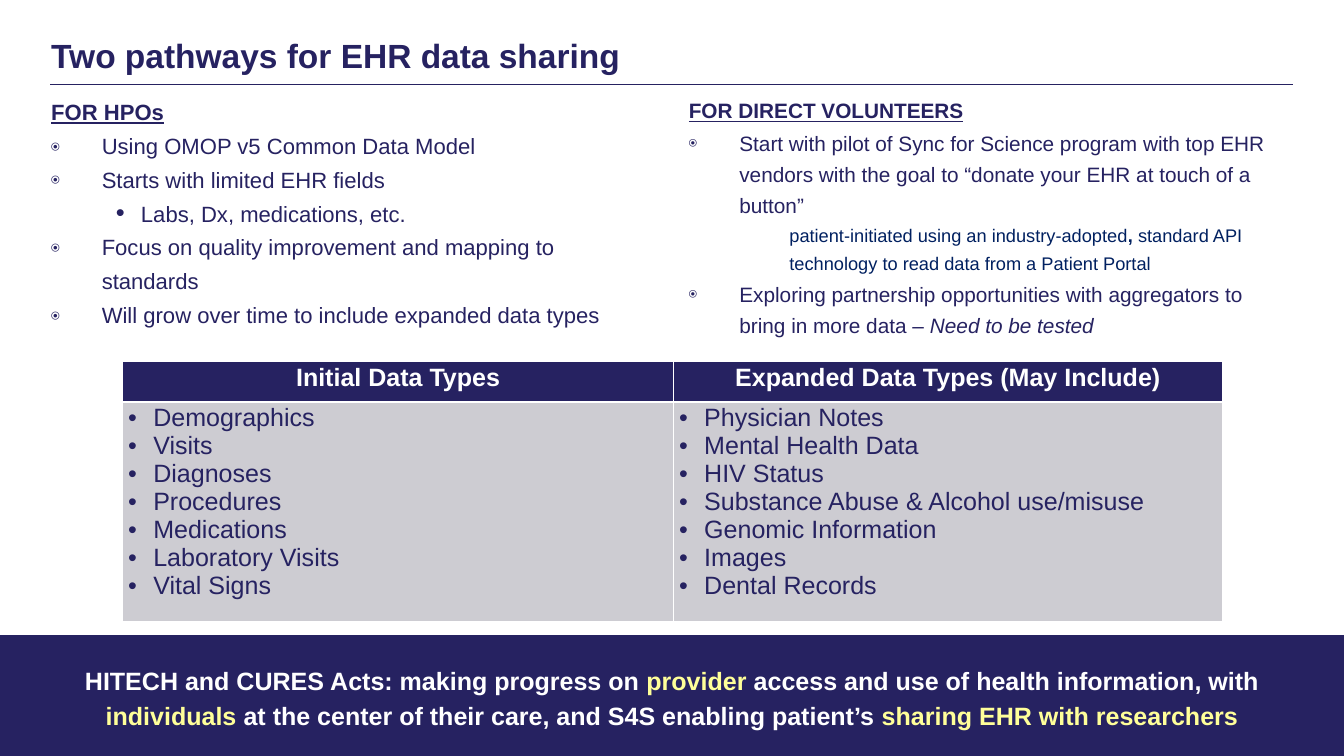
"""Build the slide on two pathways for EHR data sharing."""
from dataclasses import dataclass

import lxml.etree
import pptx
import pptx.dml.color
import pptx.enum.shapes
import pptx.enum.text
import pptx.oxml.ns
import pptx.slide
import pptx.table
import pptx.text.text
import pptx.util
from pptx.util import Cm

COLOURS = {
    "navy": "262261",
    "blue": "002060",
    "white": "FFFFFF",
    "yellow": "FFFF99",
    "grey": "CDCCD2",
}
PAGE_WIDTH, PAGE_HEIGHT = 55.86, 31.42
BAND_TOP = 26.4
LIST_INDENT = 2.1
TABLE_SIZE = 29.5


@dataclass(frozen=True)
class Bullet:
    char: str
    typeface: str
    percent: int
    hang: float


@dataclass(frozen=True)
class Item:
    spans: tuple
    size: float
    pitch: float
    indent: float = LIST_INDENT
    bullet: Bullet | None = None
    colour: str = "navy"
    before: float = 0


@dataclass(frozen=True)
class Pathway:
    heading: str
    size: float
    left: float
    heading_top: float
    list_top: float
    width: float
    items: tuple


RING = Bullet("⦿", "Times New Roman", 60, LIST_INDENT)
DOT = Bullet("•", "Arial", 115, 1.04)
CELL_DOT = Bullet("•", "Arial", 100, 1.04)

PATHWAYS = (
    Pathway("FOR HPOs", 26, 2.13, 4.1, 5.2, 24.2, (
        Item(("Using OMOP v5 Common Data Model",), 26, 39.8, bullet=RING),
        Item(("Starts with limited EHR fields",), 26, 39.8, bullet=RING),
        Item(("Labs, Dx, medications, etc.",), 26, 39.8, 3.73, DOT),
        Item(("Focus on quality improvement and mapping to standards",), 26, 39.8, bullet=RING),
        Item(("Will grow over time to include expanded data types",), 26, 39.8, bullet=RING),
    )),
    Pathway("FOR DIRECT VOLUNTEERS", 24.5, 28.63, 4.08, 5.15, 24.3, (
        Item(("Start with pilot of Sync for Science program with top EHR vendors with the "
              "goal to “donate your EHR at touch of a button”",), 24.5, 36.9, bullet=RING),
        Item(("patient-initiated using an industry-adopted", (", ", {"bold": True}),
              "standard API technology to read data from a Patient Portal"),
             21.5, 33, 4.18, colour="blue"),
        Item(("Exploring partnership opportunities with aggregators to bring in more data – ",
              ("Need to be tested", {"italic": True})), 24.5, 37.1, bullet=RING, before=1),
    )),
)

DATA_TYPES = {
    "Initial Data Types": (
        "Demographics", "Visits", "Diagnoses", "Procedures", "Medications",
        "Laboratory Visits", "Vital Signs",
    ),
    "Expanded Data Types (May Include)": (
        "Physician Notes", "Mental Health Data", "HIV Status",
        "Substance Abuse & Alcohol use/misuse", "Genomic Information", "Images",
        "Dental Records",
    ),
}

MESSAGE = (
    ("HITECH and CURES Acts: making progress on ", "white"),
    ("provider ", "yellow"),
    ("access and use of health information, with ", "white"),
    ("individuals ", "yellow"),
    ("at the center of their care, and S4S enabling patient’s ", "white"),
    ("sharing EHR with researchers", "yellow"),
)


def rgb(name: str) -> pptx.dml.color.RGBColor:
    """Return the named colour."""
    return pptx.dml.color.RGBColor.from_string(COLOURS[name])


def add_span(para: pptx.text.text._Paragraph, text: str, *, size: float, colour: str = "navy",
             bold: bool = False, italic: bool = False, underline: bool = False) -> None:
    """Append formatted text to a paragraph."""
    span = para.add_run()
    span.text = text
    font = span.font
    font.name, font.size = "Arial", pptx.util.Pt(size)
    font.bold, font.italic, font.underline = bold, italic, underline
    font.color.rgb = rgb(colour)


def set_indent(para: pptx.text.text._Paragraph, indent: float, bullet: Bullet | None) -> None:
    """Set the left indent and the hanging bullet of a paragraph."""
    props = para._p.get_or_add_pPr()
    props.set("marL", str(Cm(indent)))
    props.set("indent", str(-Cm(bullet.hang) if bullet else 0))
    if bullet:
        for tag, key, value in (
            ("a:buSzPct", "val", str(bullet.percent * 1000)),
            ("a:buFont", "typeface", bullet.typeface),
            ("a:buChar", "char", bullet.char),
        ):
            lxml.etree.SubElement(props, pptx.oxml.ns.qn(tag)).set(key, value)


def clear_margins(frame: pptx.text.text.TextFrame) -> None:
    """Make a text frame wrap, with no inner margins."""
    frame.word_wrap = True
    frame.auto_size = pptx.enum.text.MSO_AUTO_SIZE.NONE
    frame.margin_left = frame.margin_right = frame.margin_top = frame.margin_bottom = 0


def add_box(page: pptx.slide.Slide, left: float, top: float, width: float,
            height: float) -> pptx.text.text.TextFrame:
    """Add a text box and return its frame."""
    box = page.shapes.add_textbox(Cm(left), Cm(top), Cm(width), Cm(height))
    clear_margins(box.text_frame)
    return box.text_frame


def add_title(page: pptx.slide.Slide) -> None:
    """Fill the title and draw the rule below it."""
    title = page.shapes.title
    title.left, title.top, title.width, title.height = Cm(2.13), Cm(1.4), Cm(27), Cm(1.75)
    clear_margins(title.text_frame)
    para = title.text_frame.paragraphs[0]
    para.alignment = pptx.enum.text.PP_ALIGN.LEFT
    add_span(para, "Two pathways for EHR data sharing", size=39.5, bold=True)
    rule = page.shapes.add_connector(pptx.enum.shapes.MSO_CONNECTOR.STRAIGHT,
                                     Cm(2.08), Cm(3.5), Cm(53.75), Cm(3.5))
    rule.line.color.rgb = rgb("navy")
    rule.line.width = pptx.util.Pt(0.5)
    lxml.etree.SubElement(rule._element.spPr, pptx.oxml.ns.qn("a:effectLst"))


def add_pathway(page: pptx.slide.Slide, pathway: Pathway) -> None:
    """Add the heading and the list of one pathway."""
    heading = add_box(page, pathway.left, pathway.heading_top, pathway.width, 1.1)
    add_span(heading.paragraphs[0], pathway.heading, size=pathway.size, bold=True, underline=True)
    frame = add_box(page, pathway.left, pathway.list_top, pathway.width, 8.9)
    for index, item in enumerate(pathway.items):
        para = frame.add_paragraph() if index else frame.paragraphs[0]
        set_indent(para, item.indent, item.bullet)
        para.line_spacing = pptx.util.Pt(item.pitch)
        if item.before:
            para.space_before = pptx.util.Pt(item.before)
        for part in item.spans:
            text, style = (part, {}) if isinstance(part, str) else part
            add_span(para, text, size=item.size, colour=item.colour, **style)


def format_cell(cell: pptx.table._Cell, fill: str, widths: dict[str, float]) -> None:
    """Set the margins, white borders and fill of a cell."""
    cell.margin_left = cell.margin_right = cell.margin_bottom = 0
    cell.margin_top = Cm(0.08)
    props = cell._tc.get_or_add_tcPr()
    for side, width in widths.items():
        border = lxml.etree.SubElement(props, pptx.oxml.ns.qn(f"a:ln{side}"))
        border.set("w", str(pptx.util.Pt(width)))
        paint = lxml.etree.SubElement(border, pptx.oxml.ns.qn("a:solidFill"))
        lxml.etree.SubElement(paint, pptx.oxml.ns.qn("a:srgbClr")).set("val", COLOURS["white"])
    cell.fill.solid()
    cell.fill.fore_color.rgb = rgb(fill)


def add_data_types(page: pptx.slide.Slide) -> None:
    """Add the table of initial and expanded data types."""
    table = page.shapes.add_table(2, 2, Cm(5.1), Cm(15.02), Cm(45.7), Cm(10.8)).table
    table.horz_banding = False
    table.columns[0].width, table.columns[1].width = Cm(22.9), Cm(22.8)
    table.rows[0].height, table.rows[1].height = Cm(1.68), Cm(9.12)
    for column, (heading, entries) in enumerate(DATA_TYPES.items()):
        head, body = table.cell(0, column), table.cell(1, column)
        format_cell(head, "navy", {"L": 1, "R": 1, "T": 1, "B": 3})
        format_cell(body, "grey", {"L": 1, "R": 1, "T": 3, "B": 1})
        para = head.text_frame.paragraphs[0]
        para.alignment = pptx.enum.text.PP_ALIGN.CENTER
        add_span(para, heading, size=TABLE_SIZE, colour="white", bold=True)
        for index, entry in enumerate(entries):
            para = body.text_frame.add_paragraph() if index else body.text_frame.paragraphs[0]
            set_indent(para, 1.27, CELL_DOT)
            add_span(para, entry, size=TABLE_SIZE)


def add_message(page: pptx.slide.Slide) -> None:
    """Add the closing message on its band."""
    band = page.shapes.add_shape(pptx.enum.shapes.MSO_SHAPE.RECTANGLE, 0, Cm(BAND_TOP),
                                 Cm(PAGE_WIDTH), Cm(PAGE_HEIGHT - BAND_TOP))
    band.shadow.inherit = False
    band.fill.solid()
    band.fill.fore_color.rgb = rgb("navy")
    band.line.fill.background()
    frame = band.text_frame
    clear_margins(frame)
    frame.margin_left = frame.margin_right = Cm(3)
    frame.vertical_anchor = pptx.enum.text.MSO_ANCHOR.MIDDLE
    para = frame.paragraphs[0]
    para.alignment = pptx.enum.text.PP_ALIGN.CENTER
    para.line_spacing = 1.15
    for text, colour in MESSAGE:
        add_span(para, text, size=TABLE_SIZE, colour=colour, bold=True)


def main() -> None:
    """Build and save the deck."""
    deck = pptx.Presentation()
    deck.slide_width, deck.slide_height = Cm(PAGE_WIDTH), Cm(PAGE_HEIGHT)
    page = deck.slides.add_slide(deck.slide_layouts.get_by_name("Title Only"))
    add_title(page)
    for pathway in PATHWAYS:
        add_pathway(page, pathway)
    add_message(page)
    add_data_types(page)
    deck.save("out.pptx")


if __name__ == "__main__":
    main()
